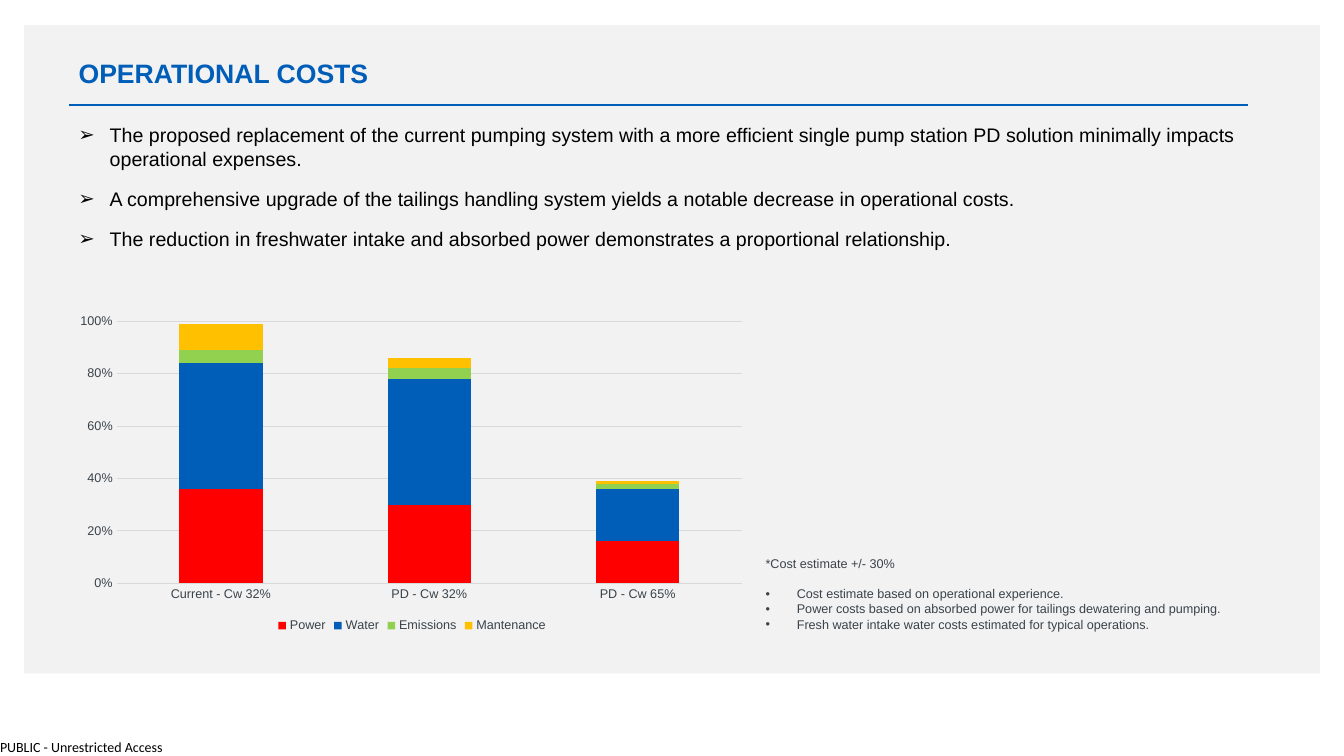
from lxml import etree
from pptx import Presentation
from pptx.chart.data import CategoryChartData
from pptx.dml.color import RGBColor
from pptx.enum.chart import XL_CHART_TYPE, XL_LEGEND_POSITION, XL_TICK_MARK
from pptx.enum.shapes import MSO_CONNECTOR, MSO_SHAPE
from pptx.enum.text import MSO_ANCHOR, PP_ALIGN
from pptx.oxml.ns import qn
from pptx.util import Inches, Pt

STACKED = XL_CHART_TYPE.COLUMN_STACKED
LEGEND_BOTTOM = XL_LEGEND_POSITION.BOTTOM
NO_TICK = XL_TICK_MARK.NONE
RECTANGLE = MSO_SHAPE.RECTANGLE
STRAIGHT = MSO_CONNECTOR.STRAIGHT
TOP, MIDDLE = MSO_ANCHOR.TOP, MSO_ANCHOR.MIDDLE
LEFT = PP_ALIGN.LEFT

COLORS = {"panel": "F2F2F2", "blue": "005EB8", "black": "000000",
          "slate": "3A434A", "grid": "D9D9D9", "red": "FF0000",
          "green": "92D050", "amber": "FFC000"}

WIDTH, HEIGHT = 13.33, 7.5
MARGIN = 0.68           # left edge shared by title, rule, text and chart
CONTENT_WIDTH = 11.75
CHART_WIDTH = 0.58 * CONTENT_WIDTH
INDENT = 0.31

TITLE_FONT = {"name": "Arial", "size": Pt(19), "bold": True}
BODY_FONT = {"name": "Arial", "size": Pt(14)}
SMALL_FONT = {"name": "Arial", "size": Pt(9)}
LABEL_FONT = {"name": "Calibri", "size": Pt(10)}

POINTS = [
    "The proposed replacement of the current pumping system with a more efficient "
    "single pump station PD solution minimally impacts operational expenses.",
    "A comprehensive upgrade of the tailings handling system yields a notable "
    "decrease in operational costs.",
    "The reduction in freshwater intake and absorbed power demonstrates a "
    "proportional relationship.",
]
ASSUMPTIONS = [
    "Cost estimate based on operational experience.",
    "Power costs based on absorbed power for tailings dewatering and pumping.",
    "Fresh water intake water costs estimated for typical operations.",
]
SCENARIOS = ["Current - Cw 32%", "PD - Cw 32%", "PD - Cw 65%"]
COSTS = [
    ("Power", (0.36, 0.30, 0.16), "red"),
    ("Water", (0.48, 0.48, 0.20), "blue"),
    ("Emissions", (0.05, 0.04, 0.02), "green"),
    ("Mantenance", (0.10, 0.04, 0.01), "amber"),
]


def rgb(color):
    return RGBColor.from_string(COLORS[color])


def format_font(font, values, color):
    for name, value in values.items():
        setattr(font, name, value)
    font.color.rgb = rgb(color)


def add_bullet(para, mark):
    """Give the paragraph a hanging indent and a bullet character."""
    props = para._p.get_or_add_pPr()
    props.set("marL", str(Inches(INDENT)))
    props.set("indent", str(-Inches(INDENT)))
    etree.SubElement(props, qn("a:buFont")).set("typeface", "Arial")
    etree.SubElement(props, qn("a:buChar")).set("char", mark)


def write_lines(frame, lines, font, color):
    """Fill the frame from (text, bullet, space before, space after) lines."""
    for index, (text, bullet, before, after) in enumerate(lines):
        para = frame.add_paragraph() if index else frame.paragraphs[0]
        if bullet:
            add_bullet(para, bullet)
        para.alignment = LEFT
        para.space_before = Pt(before if index else 0)
        para.space_after = Pt(after)
        span = para.add_run()
        span.text = text
        format_font(span.font, font, color)


def add_text(page, place, lines, font, color, inset=(0.1, 0.05)):
    box = page.shapes.add_textbox(*map(Inches, place))
    frame = box.text_frame
    frame.word_wrap = True
    frame.vertical_anchor = TOP
    frame.margin_left = frame.margin_right = Inches(inset[0])
    frame.margin_top = frame.margin_bottom = Inches(inset[1])
    write_lines(frame, lines, font, color)


def add_panel(page, place):
    panel = page.shapes.add_shape(RECTANGLE, *map(Inches, place))
    panel.shadow.inherit = False
    panel.fill.solid()
    panel.fill.fore_color.rgb = rgb("panel")
    panel.line.fill.background()


def add_rule(page, left, right, top):
    rule = page.shapes.add_connector(STRAIGHT, *map(Inches, (left, top, right, top)))
    rule.line.color.rgb = rgb("blue")
    rule.line.width = Pt(1)
    etree.SubElement(rule._element.spPr, qn("a:effectLst"))


def set_title(page, place, text):
    title = page.shapes.title
    title.left, title.top, title.width, title.height = map(Inches, place)
    frame = title.text_frame
    frame.vertical_anchor = MIDDLE
    write_lines(frame, [(text, None, 0, 0)], TITLE_FONT, "blue")
    frame.paragraphs[0].line_spacing = 0.75


def set_plot_layout(chart, shares):
    """Fix the inner plot area, in shares of the chart frame."""
    area = chart._chartSpace.chart.plotArea
    for old in area.findall(qn("c:layout")):
        area.remove(old)
    layout = etree.Element(qn("c:layout"))
    area.insert(0, layout)
    manual = etree.SubElement(layout, qn("c:manualLayout"))
    settings = {"layoutTarget": "inner", "xMode": "edge", "yMode": "edge", **shares}
    for name, value in settings.items():
        etree.SubElement(manual, qn(f"c:{name}")).set("val", str(value))


def format_axes(chart):
    for axis in (chart.category_axis, chart.value_axis):
        axis.major_tick_mark = axis.minor_tick_mark = NO_TICK
        format_font(axis.tick_labels.font, SMALL_FONT, "slate")
    values = chart.value_axis
    values.minimum_scale, values.maximum_scale, values.major_unit = 0, 1.05, 0.2
    values.tick_labels.number_format = "0%"
    values.tick_labels.number_format_is_linked = False
    values.format.line.fill.background()
    values.has_major_gridlines = True
    for line in (chart.category_axis.format.line, values.major_gridlines.format.line):
        line.color.rgb = rgb("grid")
        line.width = Pt(0.75)


def add_cost_chart(page, place):
    data = CategoryChartData(number_format="0%")
    data.categories = SCENARIOS
    for name, shares, _ in COSTS:
        data.add_series(name, shares)
    chart = page.shapes.add_chart(STACKED, *map(Inches, place), data).chart
    format_font(chart.font, SMALL_FONT, "slate")
    chart.has_title = False
    chart.has_legend = True
    chart.legend.position = LEGEND_BOTTOM
    chart.legend.include_in_layout = False
    format_font(chart.legend.font, SMALL_FONT, "slate")
    plot = chart.plots[0]
    plot.gap_width, plot.overlap, plot.vary_by_categories = 150, 100, False
    for series, (_, _, color) in zip(plot.series, COSTS):
        series.format.fill.solid()
        series.format.fill.fore_color.rgb = rgb(color)
    format_axes(chart)
    set_plot_layout(chart, {"x": 0.07, "y": 0.02, "w": 0.91, "h": 0.82})


def main():
    deck = Presentation()
    deck.slide_width, deck.slide_height = Inches(WIDTH), Inches(HEIGHT)
    page = deck.slides.add_slide(deck.slide_layouts.get_by_name("Title Only"))

    add_panel(page, (0.24, 0.25, 12.85, 6.43))
    # the panel goes behind the title
    page.shapes._spTree.append(page.shapes.title._element)
    add_text(page, (0, HEIGHT - 0.17, 1.65, 0.17),
             [("PUBLIC - Unrestricted Access", None, 0, 0)],
             LABEL_FONT, "black", inset=(0, 0))
    add_rule(page, MARGIN, 12.38, 1.04)
    set_title(page, (MARGIN, 0.56, 9.84, 0.4), "OPERATIONAL COSTS")
    add_text(page, (MARGIN, 1.17, CONTENT_WIDTH, 1.38),
             [(point, "➢", 6, 6) for point in POINTS], BODY_FONT, "black")
    add_cost_chart(page, (MARGIN, 2.99, CHART_WIDTH, 3.33))
    notes = [("*Cost estimate +/- 30%", None, 0, 10.5)]
    notes += [(text, "•", 0, 0) for text in ASSUMPTIONS]
    add_text(page, (MARGIN + CHART_WIDTH, 5.47, CONTENT_WIDTH - CHART_WIDTH, 0.86),
             notes, SMALL_FONT, "slate")
    deck.save("out.pptx")


if __name__ == "__main__":
    main()
